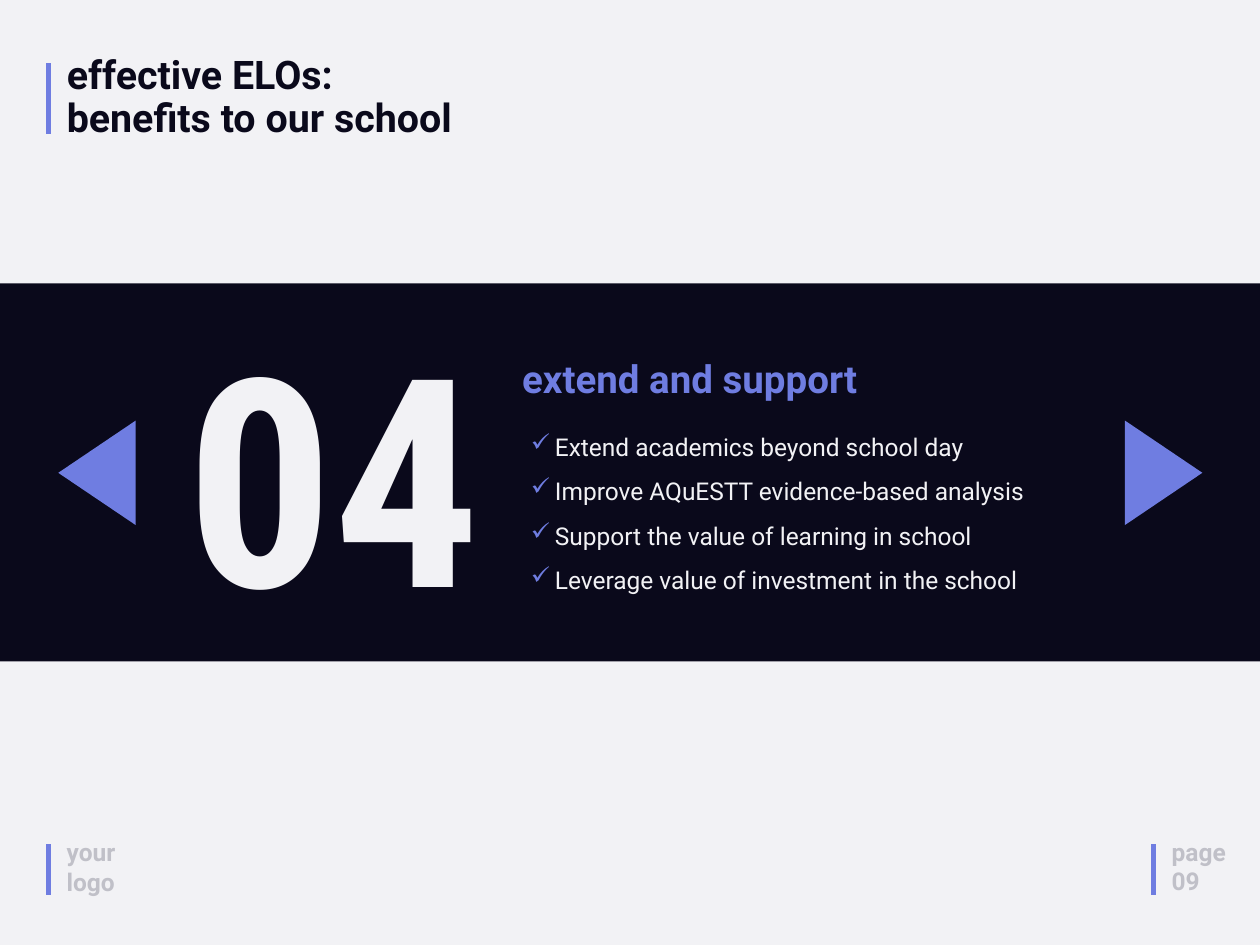
from lxml.etree import SubElement
from pptx import Presentation
from pptx.dml.color import RGBColor
from pptx.enum.shapes import MSO_CONNECTOR as CONNECTOR, MSO_SHAPE as SHAPE
from pptx.enum.text import MSO_ANCHOR as ANCHOR, MSO_AUTO_SIZE as AUTO_SIZE, PP_ALIGN as ALIGN
from pptx.oxml.ns import qn
from pptx.util import Inches, Pt

NIGHT = RGBColor(0x0A, 0x09, 0x1B)
PERIWINKLE = RGBColor(0x6F, 0x7D, 0xE1)
MIST = RGBColor(0xF2, 0xF2, 0xF5)
GREY = RGBColor(0xC0, 0xC0, 0xC8)


class SlideBuilder:
    """Draws styled elements on one slide."""

    font = "Roboto"
    accent = PERIWINKLE

    def __init__(self, slide):
        self.slide = slide
        slide.background.fill.solid()
        slide.background.fill.fore_color.rgb = MIST

    def fill_text(self, shape, text, size, color, bold=True, font=None, spacing=None):
        frame = shape.text_frame
        frame.text = text
        frame.word_wrap = True
        frame.auto_size = AUTO_SIZE.NONE
        frame.vertical_anchor = ANCHOR.TOP
        for paragraph in frame.paragraphs:
            paragraph.alignment = ALIGN.LEFT
            paragraph.line_spacing = spacing
            for run in paragraph.runs:
                run.font.name = font or self.font
                run.font.size = Pt(size)
                run.font.bold = bold
                run.font.color.rgb = color

    def title(self, text, left, top, width, height):
        shape = self.slide.shapes.title
        shape.left, shape.top = Inches(left), Inches(top)
        shape.width, shape.height = Inches(width), Inches(height)
        self.fill_text(shape, text, 45, NIGHT, spacing=0.9)

    def text(self, text, left, top, width, height, size, color, **style):
        box = self.slide.shapes.add_textbox(
            Inches(left), Inches(top), Inches(width), Inches(height))
        self.fill_text(box, text, size, color, **style)
        return box

    def checklist(self, items, left, top, width, height):
        box = self.text("\n".join(items), left, top, width, height,
                        28, MIST, bold=False, spacing=1.5)
        for paragraph in box.text_frame.paragraphs:
            properties = paragraph._p.get_or_add_pPr()
            properties.set("marL", str(Inches(0.38)))
            properties.set("indent", str(Inches(-0.38)))
            bullet_color = SubElement(properties, qn("a:buClr"))
            SubElement(bullet_color, qn("a:srgbClr")).set("val", str(self.accent))
            SubElement(properties, qn("a:buChar")).set("char", "✓")

    def shape(self, kind, left, top, width, height, color, rotation=0):
        shape = self.slide.shapes.add_shape(
            kind, Inches(left), Inches(top), Inches(width), Inches(height))
        shape.shadow.inherit = False
        shape.fill.solid()
        shape.fill.fore_color.rgb = color
        shape.line.fill.background()
        shape.rotation = rotation

    def marker(self, x, top, bottom):
        line = self.slide.shapes.add_connector(
            CONNECTOR.STRAIGHT, Inches(x), Inches(top), Inches(x), Inches(bottom))
        line.line.color.rgb = self.accent
        line.line.width = Pt(5)
        SubElement(line._element.spPr, qn("a:effectLst"))


def main():
    presentation = Presentation()
    presentation.slide_width, presentation.slide_height = Inches(20), Inches(15)
    builder = SlideBuilder(presentation.slides.add_slide(presentation.slide_layouts[5]))

    builder.title("effective ELOs:\vbenefits to our school", 0.96, 0.83, 10.12, 1.46)
    for x, top, bottom in ((0.77, 1, 2.13), (0.77, 13.4, 14.21), (18.31, 13.4, 14.21)):
        builder.marker(x, top, bottom)
    builder.text("your logo", 0.96, 13.24, 1.19, 1.04, 28, GREY)
    builder.text("page\n09", 18.5, 13.23, 1.9, 1.04, 28, GREY)

    builder.shape(SHAPE.RECTANGLE, 0, 4.5, 20, 6, NIGHT)
    for left, rotation in ((0.71, 270), (17.64, 90)):
        builder.shape(SHAPE.ISOSCELES_TRIANGLE, left, 6.89, 1.66, 1.23,
                      PERIWINKLE, rotation)
    builder.text("04", 2.86, 4.65, 5.96, 5.71, 333, MIST, font="Roboto Condensed")
    builder.text("extend and support", 8.19, 5.59, 9.31, 0.84, 44, PERIWINKLE)
    builder.checklist((
        "Extend academics beyond school day",
        "Improve AQuESTT evidence-based analysis",
        "Support the value of learning in school",
        "Leverage value of investment in the school",
    ), 8.33, 6.58, 8.42, 2.93)

    presentation.save("out.pptx")


if __name__ == "__main__":
    main()
